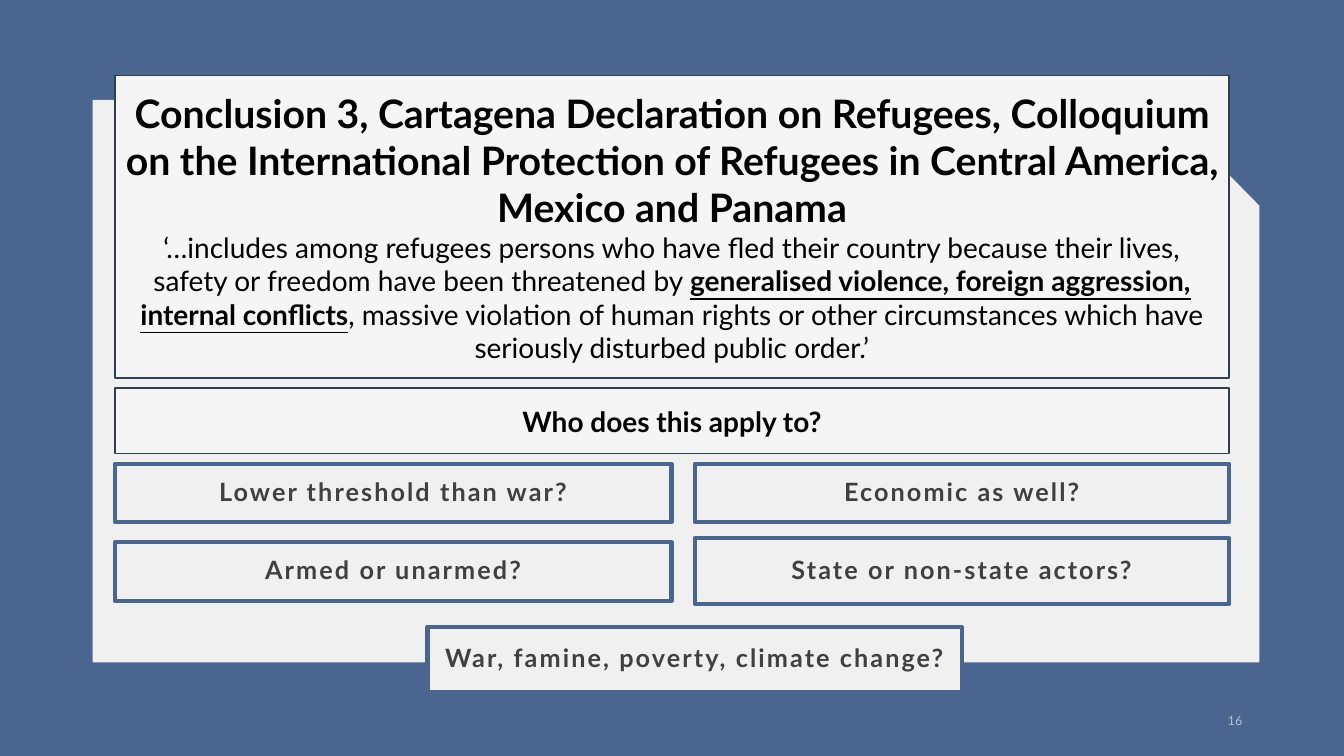
from dataclasses import dataclass

from pptx import Presentation
from pptx.dml.color import RGBColor
from pptx.enum.shapes import MSO_SHAPE
from pptx.enum.text import MSO_ANCHOR, PP_ALIGN
from pptx.util import Inches, Pt


@dataclass(frozen=True)
class Theme:
    font: str = "Lato"
    blue: str = "4A6590"
    panel: str = "F1F0F0"
    card: str = "F4F5F4"
    card_border: str = "323F4F"
    ink: str = "000000"
    question_ink: str = "404040"
    number_ink: str = "B2C0D7"
    heading_size: int = 28
    body_size: int = 20
    question_size: int = 18
    number_size: int = 9


class SlideBuilder:
    def __init__(self, slide, theme):
        self.slide = slide
        self.theme = theme

    def background(self):
        fill = self.slide.background.fill
        fill.solid()
        fill.fore_color.rgb = RGBColor.from_string(self.theme.blue)

    def paint(self, shape, fill, border=None, width=0):
        shape.shadow.inherit = False
        shape.fill.solid()
        shape.fill.fore_color.rgb = RGBColor.from_string(fill)
        if border:
            shape.line.color.rgb = RGBColor.from_string(border)
            shape.line.width = Pt(width)
        else:
            shape.line.fill.background()

    def style(self, run, size, color, bold=False, underline=False):
        run.font.name = self.theme.font
        run.font.size = Pt(size)
        run.font.color.rgb = RGBColor.from_string(color)
        run.font.bold = bold
        run.font.underline = underline

    def panel(self, corners):
        points = [(Inches(x), Inches(y)) for x, y in corners]
        outline = self.slide.shapes.build_freeform(*points[0])
        outline.add_line_segments(points[1:], close=True)
        self.paint(outline.convert_to_shape(), self.theme.panel)

    def box(self, bounds, fill, border, width):
        box = self.slide.shapes.add_shape(MSO_SHAPE.RECTANGLE, *map(Inches, bounds))
        self.paint(box, fill, border, width)
        box.text_frame.word_wrap = True
        box.text_frame.vertical_anchor = MSO_ANCHOR.MIDDLE
        return box.text_frame

    def card(self, bounds, paragraphs):
        theme = self.theme
        frame = self.box(bounds, theme.card, theme.card_border, 1)
        frame.text = "\n".join("" for _ in paragraphs)
        for paragraph, (size, pieces) in zip(frame.paragraphs, paragraphs):
            paragraph.alignment = PP_ALIGN.CENTER
            for text, bold, underline in pieces:
                run = paragraph.add_run()
                run.text = text
                self.style(run, size, theme.ink, bold, underline)

    def question(self, bounds, text):
        theme = self.theme
        frame = self.box(bounds, theme.panel, theme.blue, 3)
        frame.text = text
        paragraph = frame.paragraphs[0]
        paragraph.alignment = PP_ALIGN.CENTER
        paragraph.line_spacing = 0.9
        paragraph.space_before = Pt(10)
        run = paragraph.runs[0]
        self.style(run, theme.question_size, theme.question_ink, bold=True)
        run.font._element.set("spc", "150")

    def page_number(self, bounds, number):
        frame = self.slide.shapes.add_textbox(*map(Inches, bounds)).text_frame
        frame.word_wrap = True
        frame.vertical_anchor = MSO_ANCHOR.MIDDLE
        frame.text = number
        frame.paragraphs[0].alignment = PP_ALIGN.RIGHT
        self.style(frame.paragraphs[0].runs[0], self.theme.number_size, self.theme.number_ink)


def main():
    presentation = Presentation()
    presentation.slide_width = Inches(13.33)
    presentation.slide_height = Inches(7.5)
    theme = Theme()
    slide = presentation.slides.add_slide(presentation.slide_layouts[6])
    builder = SlideBuilder(slide, theme)

    builder.background()
    builder.panel([(0.92, 0.99), (11.46, 0.99), (12.49, 2.04), (12.49, 6.57), (0.92, 6.57)])
    builder.page_number((9.42, 6.95, 3, 0.4), "16")

    left, full_width = 1.14, 11.05
    heading = (
        "Conclusion 3, Cartagena Declaration on Refugees, Colloquium on the "
        "International Protection of Refugees in Central America, Mexico and Panama"
    )
    quotation = [
        ("‘…includes among refugees persons who have fled their country because their "
         "lives, safety or freedom have been threatened by ", False, False),
        ("generalised violence, foreign aggression, internal conflicts", True, True),
        (", massive violation of human rights or other circumstances which have "
         "seriously disturbed public order.’", False, False),
    ]
    builder.card(
        (left, 0.75, full_width, 3),
        [(theme.heading_size, [(heading, True, False)]), (theme.body_size, quotation)],
    )
    builder.card(
        (left, 3.85, full_width, 0.65),
        [(theme.body_size, [("Who does this apply to?", True, False)])],
    )

    wide, narrow = 5.52, 5.3
    right = left + full_width - narrow
    low, tall = 0.58, 0.65
    questions = [
        ("Lower threshold than war?", left, 4.6, wide, low),
        ("Economic as well?", right, 4.6, narrow, low),
        ("Armed or unarmed?", left, 5.38, wide, low),
        ("State or non-state actors?", right, 5.34, narrow, tall),
        ("War, famine, poverty, climate change?", 4.24, 6.22, narrow, tall),
    ]
    for text, *bounds in questions:
        builder.question(bounds, text)

    presentation.save("out.pptx")


if __name__ == "__main__":
    main()
